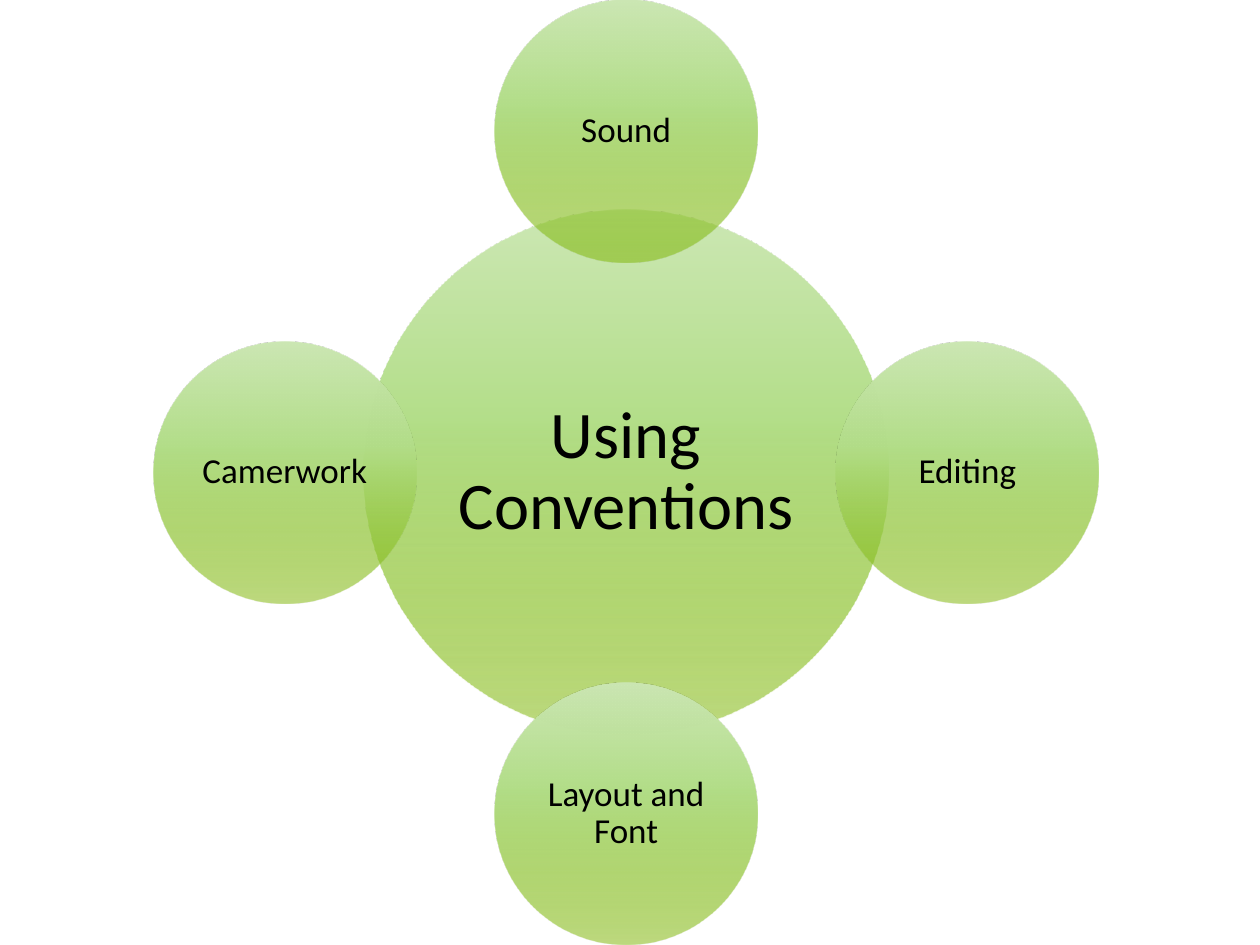
from dataclasses import dataclass
from math import sqrt

from lxml import etree
from pptx import Presentation
from pptx.dml.color import RGBColor
from pptx.enum.shapes import MSO_SHAPE
from pptx.enum.text import MSO_ANCHOR, PP_ALIGN
from pptx.oxml.ns import qn
from pptx.util import Pt

OVAL = MSO_SHAPE.OVAL
MIDDLE = MSO_ANCHOR.MIDDLE
CENTER = PP_ALIGN.CENTER


@dataclass(frozen=True)
class Theme:
    font: str = "Calibri"
    text: str = "000000"
    hub_size: int = 38
    satellite_size: int = 20
    # Position in percent, colour, opacity in percent
    gradient: tuple = ((0, "CCE7B4", 100), (40, "B3DE89", 100), (100, "7CB400", 50))


theme = Theme()


def fill_gradient(shape, stops):
    """Fill from top to bottom with any number of stops, each with its opacity."""
    shape.fill.gradient()
    shape.fill.gradient_angle = 270
    stop_list = shape.fill._xPr.find(qn("a:gradFill")).find(qn("a:gsLst"))
    for old_stop in list(stop_list):
        stop_list.remove(old_stop)
    for position, colour, opacity in stops:
        stop = etree.SubElement(stop_list, qn("a:gs"), pos=str(position * 1000))
        tint = etree.SubElement(stop, qn("a:srgbClr"), val=colour)
        if opacity < 100:
            etree.SubElement(tint, qn("a:alpha"), val=str(opacity * 1000))


def add_label(page, text, *, center_x, center_y, side, size, inset):
    """Centre text in a square box around the given point."""
    box = page.shapes.add_textbox(
        Pt(center_x - side / 2), Pt(center_y - side / 2), Pt(side), Pt(side))
    frame = box.text_frame
    frame.word_wrap = True
    frame.vertical_anchor = MIDDLE
    frame.margin_left = frame.margin_right = Pt(inset)
    frame.margin_top = frame.margin_bottom = Pt(inset)
    para = frame.paragraphs[0]
    para.alignment = CENTER
    para.line_spacing = 0.9
    span = para.add_run()
    span.text = text
    span.font.name = theme.font
    span.font.size = Pt(size)
    span.font.color.rgb = RGBColor.from_string(theme.text)


deck = Presentation()
deck.slide_width, deck.slide_height = Pt(720), Pt(540)
page = deck.slides.add_slide(deck.slide_layouts[6])

HUB_X, HUB_Y = 357.8, 270
HUB_DIAMETER, SATELLITE_DIAMETER = 300, 150
ORBIT = HUB_Y - SATELLITE_DIAMETER / 2

# Text, direction from the hub, diameter, type size, inset
circles = [("Using Conventions", (0, 0), HUB_DIAMETER, theme.hub_size, 3.8)]
for text, direction in (
    ("Sound", (0, -1)),
    ("Editing", (1, 0)),
    ("Layout and Font", (0, 1)),
    ("Camerwork", (-1, 0)),
):
    circles.append((text, direction, SATELLITE_DIAMETER, theme.satellite_size, 2))

for text, (step_x, step_y), diameter, size, inset in circles:
    center_x = HUB_X + step_x * ORBIT
    center_y = HUB_Y + step_y * ORBIT
    circle = page.shapes.add_shape(
        OVAL, Pt(center_x - diameter / 2), Pt(center_y - diameter / 2),
        Pt(diameter), Pt(diameter))
    circle.shadow.inherit = False
    circle.line.fill.background()
    fill_gradient(circle, theme.gradient)
    add_label(page, text, center_x=center_x, center_y=center_y,
              side=diameter / sqrt(2), size=size, inset=inset)

deck.save("out.pptx")
